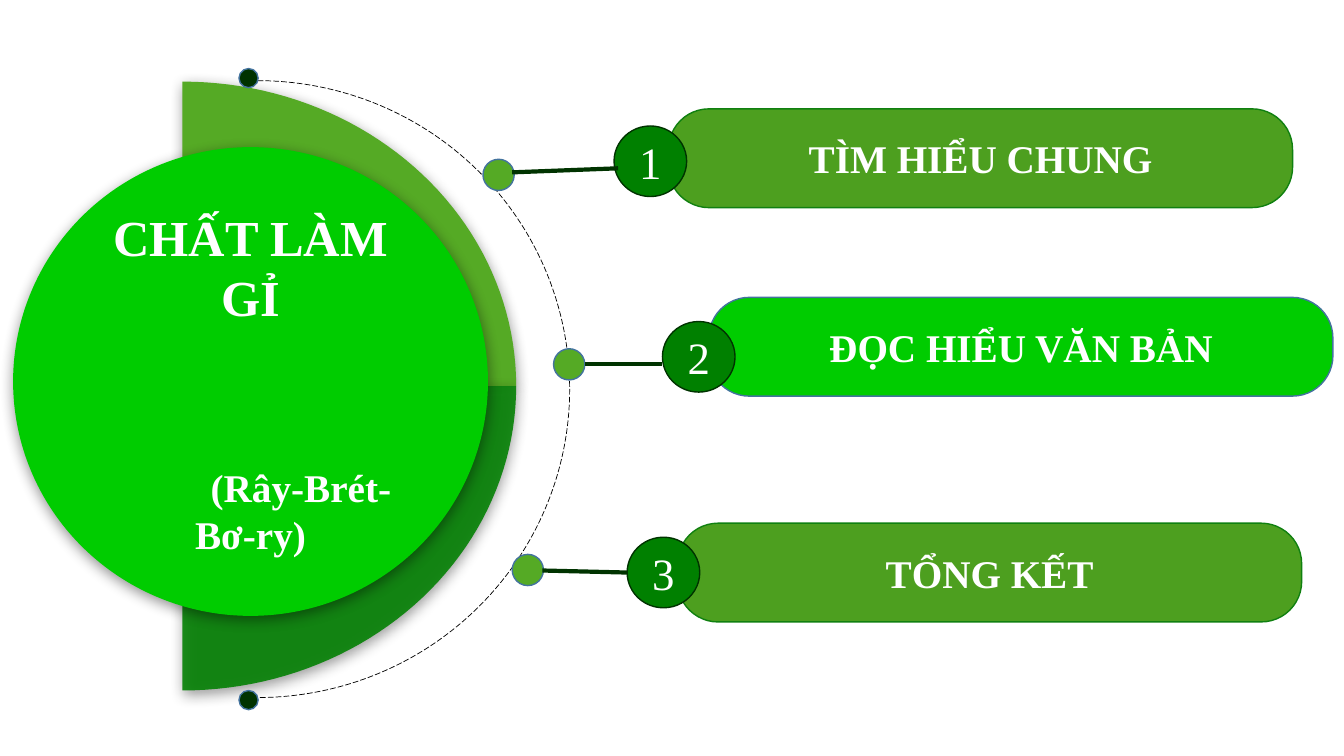
from dataclasses import dataclass
from math import cos, radians, sin

from lxml.etree import SubElement
from pptx import Presentation
from pptx.dml.color import RGBColor
from pptx.enum.dml import MSO_LINE
from pptx.enum.shapes import MSO_CONNECTOR, MSO_SHAPE as SHAPE
from pptx.enum.text import MSO_ANCHOR, PP_ALIGN
from pptx.oxml.ns import qn
from pptx.util import Pt

PX = 9144  # EMU per px, 100 px to the inch

BLACK = RGBColor(0x00, 0x00, 0x00)
WHITE = RGBColor(0xFF, 0xFF, 0xFF)
BRIGHT = RGBColor(0x00, 0xCC, 0x00)
OLIVE = RGBColor(0x4D, 0x9F, 0x1F)
LEAF = RGBColor(0x55, 0xAA, 0x25)
GREEN = RGBColor(0x00, 0x80, 0x00)
EDGE = RGBColor(0x10, 0x80, 0x10)
DARK = RGBColor(0x00, 0x33, 0x00)
BLUE = RGBColor(0x43, 0x73, 0x9E)

Point = tuple[int, int]


@dataclass
class Topic:
    label: str
    bar: Point
    badge: Point
    node: Point
    link: tuple[int, int, int, int]
    fill: RGBColor
    line: RGBColor


TOPICS = [
    Topic("TÌM HIỂU CHUNG", (663, 108), (609, 125), (479, 158),
          (508, 171, 613, 167), OLIVE, EDGE),
    Topic("ĐỌC HIỂU VĂN BẢN", (703, 295), (657, 319), (549, 346),
          (580, 361, 657, 361), BRIGHT, BLUE),
    Topic("TỔNG KẾT", (672, 519), (622, 533), (508, 550),
          (538, 566, 622, 568), OLIVE, EDGE),
]


def paint(sp, fill: RGBColor | None, line: RGBColor | None, width: float = 1) -> None:
    sp.shadow.inherit = False
    if fill is None:
        sp.fill.background()
    else:
        sp.fill.solid()
        sp.fill.fore_color.rgb = fill
    if line is None:
        sp.line.fill.background()
    else:
        sp.line.color.rgb = line
        sp.line.width = Pt(width)


def add_alpha(color, percent: int) -> None:
    SubElement(color, qn("a:alpha")).set("val", str(percent * 1000))


def add_shadow(sp) -> None:
    effects = sp._element.spPr.find(qn("a:effectLst"))
    shadow = SubElement(effects, qn("a:outerShdw"), blurRad=str(Pt(10)),
                        dist=str(Pt(3)), dir=str(82 * 60000), rotWithShape="0")
    add_alpha(SubElement(shadow, qn("a:srgbClr"), val=str(BLACK)), 43)


def add_shape(kind, at: Point, size: Point, fill: RGBColor | None,
              line: RGBColor | None, width: float = 1):
    sp = slide.shapes.add_shape(kind, *(v * PX for v in at + size))
    paint(sp, fill, line, width)
    return sp


def write(p, text: str, size: int, bold: bool) -> None:
    p.alignment = PP_ALIGN.CENTER
    r = p.add_run()
    r.text = text
    font = {"name": "Times New Roman", "size": Pt(size), "bold": bold}
    for key, value in font.items():
        setattr(r.font, key, value)
    r.font.color.rgb = WHITE


def add_quarter(start: int, fill: RGBColor):
    """Quarter of an ellipse, sweeping 90 degrees clockwise from start."""
    cx, cy, rx, ry = 181, 383, 331, 302
    rim = [(round((cx + rx * cos(radians(a))) * PX),
            round((cy + ry * sin(radians(a))) * PX))
           for a in range(start, start + 91, 2)]
    builder = slide.shapes.build_freeform(cx * PX, cy * PX)
    builder.add_line_segments(rim, close=True)
    sp = builder.convert_to_shape()
    paint(sp, fill, None)
    add_shadow(sp)
    return sp


prs = Presentation()
prs.slide_width, prs.slide_height = 1333 * PX, 750 * PX
slide = prs.slides.add_slide(prs.slide_layouts[6])

# Topic bars
for topic in TOPICS:
    sp = add_shape(SHAPE.ROUNDED_RECTANGLE, topic.bar, (619, 98), topic.fill, topic.line)
    sp.adjustments[0] = 0.41
    write(sp.text_frame.paragraphs[0], topic.label, 28, True)

# Half disc behind the title
add_quarter(-90, LEAF)
lower = add_quarter(0, GREEN)
add_alpha(lower._element.spPr.find(qn("a:solidFill"))[0], 88)

# Dashed arc with its end dots
arc = add_shape(SHAPE.ARC, (-54, 80), (619, 612), None, BLACK, 0.5)
arc.adjustments[0], arc.adjustments[1] = 162, 54.17
arc.line.dash_style = MSO_LINE.LONG_DASH
for y in (68, 685):
    add_shape(SHAPE.FLOWCHART_CONNECTOR, (237, y), (19, 19), DARK, BLUE)

# Nodes on the arc, numbered badges and the links between them
for number, topic in enumerate(TOPICS, 1):
    add_shape(SHAPE.FLOWCHART_CONNECTOR, topic.node, (31, 31), LEAF, BLUE)
    sp = add_shape(SHAPE.FLOWCHART_CONNECTOR, topic.badge, (72, 70), GREEN, DARK)
    write(sp.text_frame.paragraphs[0], str(number), 32, False)
    link = slide.shapes.add_connector(MSO_CONNECTOR.STRAIGHT, *(v * PX for v in topic.link))
    link.line.color.rgb = DARK
    link.line.width = Pt(3)
    SubElement(link._element.spPr, qn("a:effectLst"))

# Title disc
disc = add_shape(SHAPE.FLOWCHART_CONNECTOR, (13, 146), (471, 465), BRIGHT, None)
add_shadow(disc)
tf = disc.text_frame
tf.word_wrap = True
tf.vertical_anchor = MSO_ANCHOR.MIDDLE
write(tf.paragraphs[0], "CHẤT LÀM GỈ", 36, True)
p = tf.add_paragraph()
write(p, "(Rây-Brét-Bơ-ry)", 28, True)
p.space_before = Pt(97)
p._p.get_or_add_pPr().set("indent", str(100 * PX))

prs.save("out.pptx")
